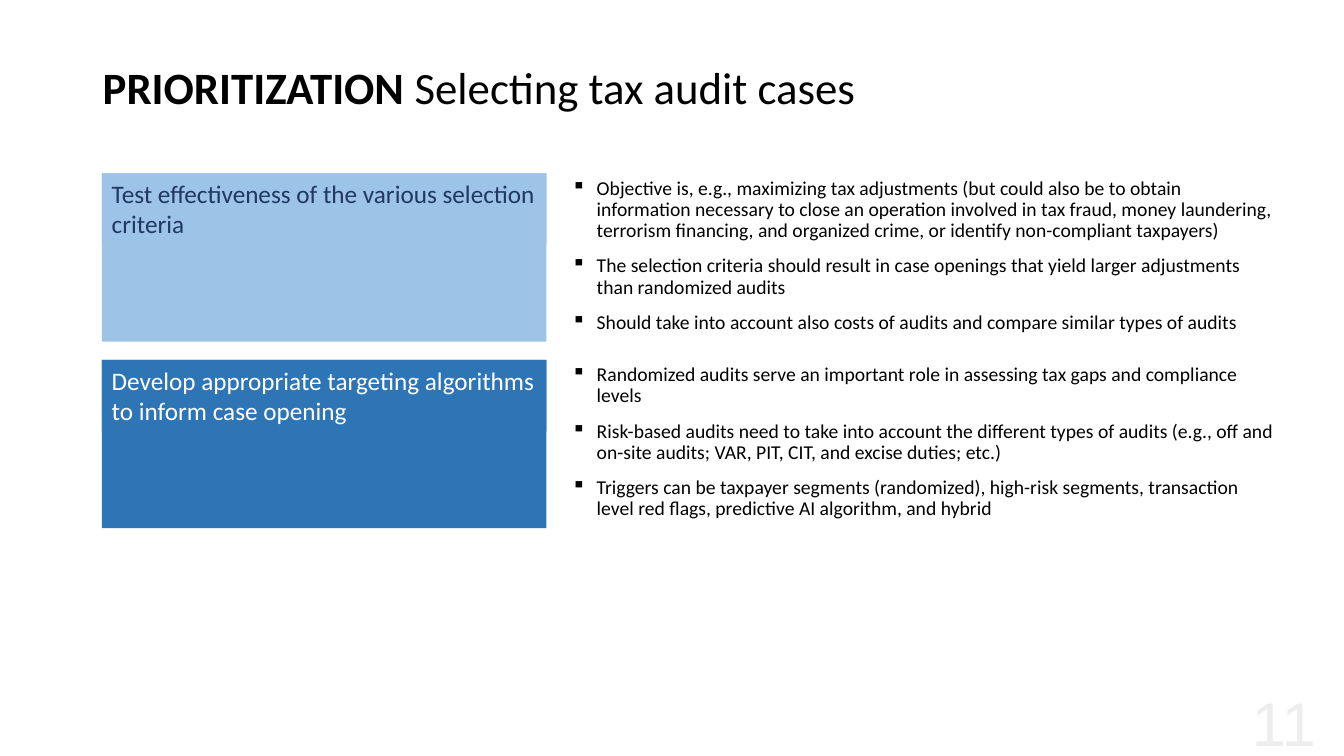
import pptx
import pptx.dml.color
import pptx.enum.shapes
import pptx.enum.text
import pptx.util
from lxml import etree

COLORS = {"light": "9DC3E6", "blue": "2E75B6", "navy": "203864",
          "white": "FFFFFF", "black": "000000", "pale": "EDEDED"}
ANCHOR = pptx.enum.text.MSO_ANCHOR
ALIGN = pptx.enum.text.PP_ALIGN

prs = pptx.Presentation()
prs.slide_width = pptx.util.Inches(13.33)
prs.slide_height = pptx.util.Inches(7.5)
s = prs.slides.add_slide(prs.slide_layouts[6])

# Grid: a label column and a bullet column, rows of equal pitch
LABEL_X, LABEL_W = 1.01, 4.41
BULLET_X, BULLET_W = 5.57, 7.21
ROW_Y, ROW_H, ROW_PITCH = 1.72, 1.67, 1.85
HEADER_H = 0.71

ROWS = [
    ("light", "navy", "Test effectiveness of the various selection criteria", [
        "Objective is, e.g., maximizing tax adjustments (but could also be to obtain "
        "information necessary to close an operation involved in tax fraud, money "
        "laundering, terrorism financing, and organized crime, or identify "
        "non-compliant taxpayers)",
        "The selection criteria should result in case openings that yield larger "
        "adjustments than randomized audits",
        "Should take into account also costs of audits and compare similar types of audits",
    ]),
    ("blue", "white", "Develop appropriate targeting algorithms to inform case opening", [
        "Randomized audits serve an important role in assessing tax gaps and "
        "compliance levels",
        "Risk-based audits need to take into account the different types of audits "
        "(e.g., off and on-site audits; VAR, PIT, CIT, and excise duties; etc.)",
        "Triggers can be taxpayer segments (randomized), high-risk segments, "
        "transaction level red flags, predictive AI algorithm, and hybrid",
    ]),
]


def add_box(x, y, w, h, fill=None, anchor=ANCHOR.TOP):
    """Add a filled rectangle, or a plain text box when there is no fill."""
    at = [pptx.util.Inches(v) for v in (x, y, w, h)]
    if fill:
        sp = s.shapes.add_shape(pptx.enum.shapes.MSO_SHAPE.RECTANGLE, *at)
        sp.shadow.inherit = False
        sp.fill.solid()
        sp.fill.fore_color.rgb = pptx.dml.color.RGBColor.from_string(COLORS[fill])
        sp.line.fill.background()
    else:
        sp = s.shapes.add_textbox(*at)
    sp.text_frame.word_wrap = True
    sp.text_frame.vertical_anchor = anchor
    return sp.text_frame


def add_run(p, text, size, color, bold=False, name="Calibri"):
    r = p.add_run()
    r.text = text
    formats = {"size": pptx.util.Pt(size), "bold": bold, "name": name}
    for key, value in formats.items():
        setattr(r.font, key, value)
    r.font.color.rgb = pptx.dml.color.RGBColor.from_string(COLORS[color])


# Title
p = add_box(0.92, 0.42, 12.05, 0.95, anchor=ANCHOR.MIDDLE).paragraphs[0]
p.line_spacing = 0.9
add_run(p, "PRIORITIZATION", 32, "black", bold=True)
add_run(p, " Selecting tax audit cases", 32, "black")

for i, (fill, color, label, bullets) in enumerate(ROWS):
    y = ROW_Y + i * ROW_PITCH

    # Panel with its label on top
    add_box(LABEL_X, y, LABEL_W, ROW_H, fill)
    p = add_box(LABEL_X, y, LABEL_W, HEADER_H, fill).paragraphs[0]
    p.alignment = ALIGN.LEFT
    add_run(p, label, 18, color)

    # Bullets
    tf = add_box(BULLET_X, y, BULLET_W, ROW_H)
    for j, text in enumerate(bullets):
        p = tf.add_paragraph() if j else tf.paragraphs[0]
        p.line_spacing = 0.9
        p.space_before = pptx.util.Pt(10)
        add_run(p, text, 14, "black")
        pPr = p._p.get_or_add_pPr()
        pPr.set("marL", str(pptx.util.Inches(0.25)))
        pPr.set("indent", str(-pptx.util.Inches(0.25)))
        bullet = etree.SubElement(pPr, pptx.oxml.ns.qn("a:buChar"))
        bullet.set("char", "▪")

# Page number
p = add_box(11.65, 6.75, 1.5, 0.75).paragraphs[0]
p.alignment = ALIGN.RIGHT
add_run(p, "11", 44, "pale", name="Arial")

prs.save("out.pptx")
